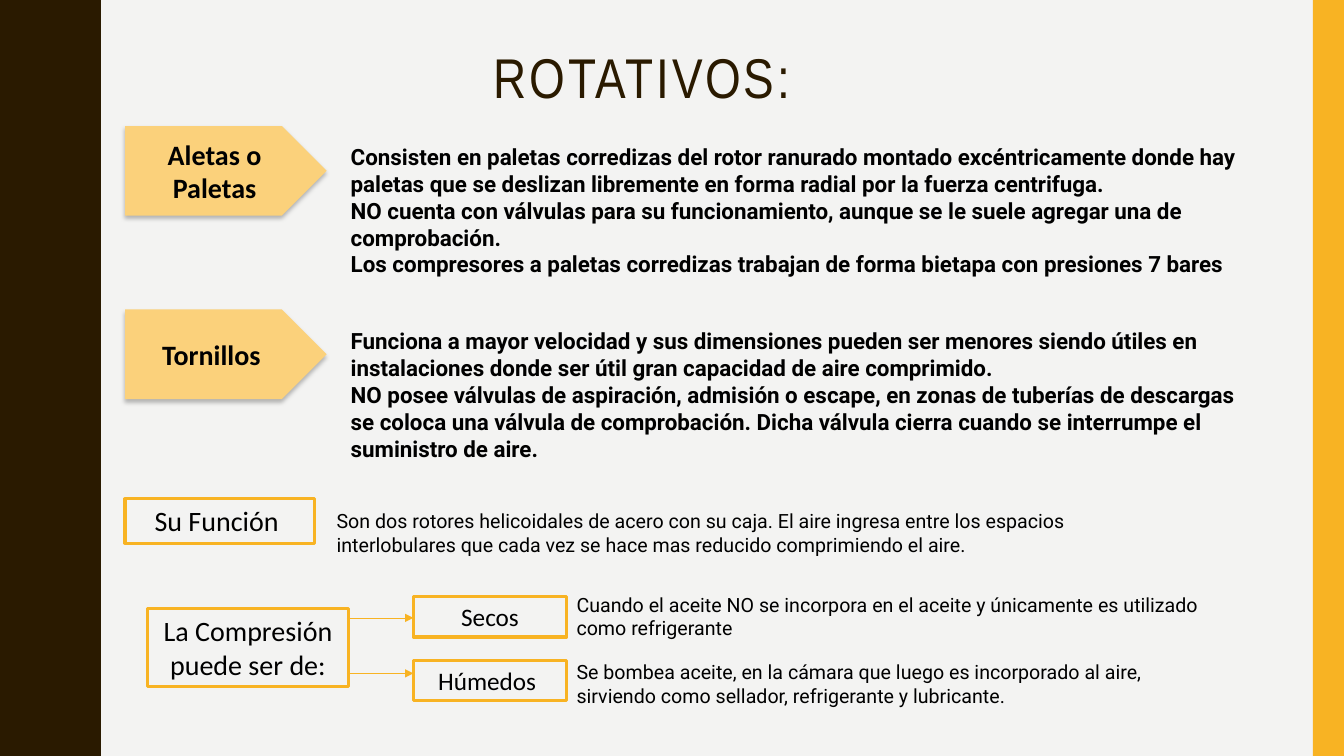
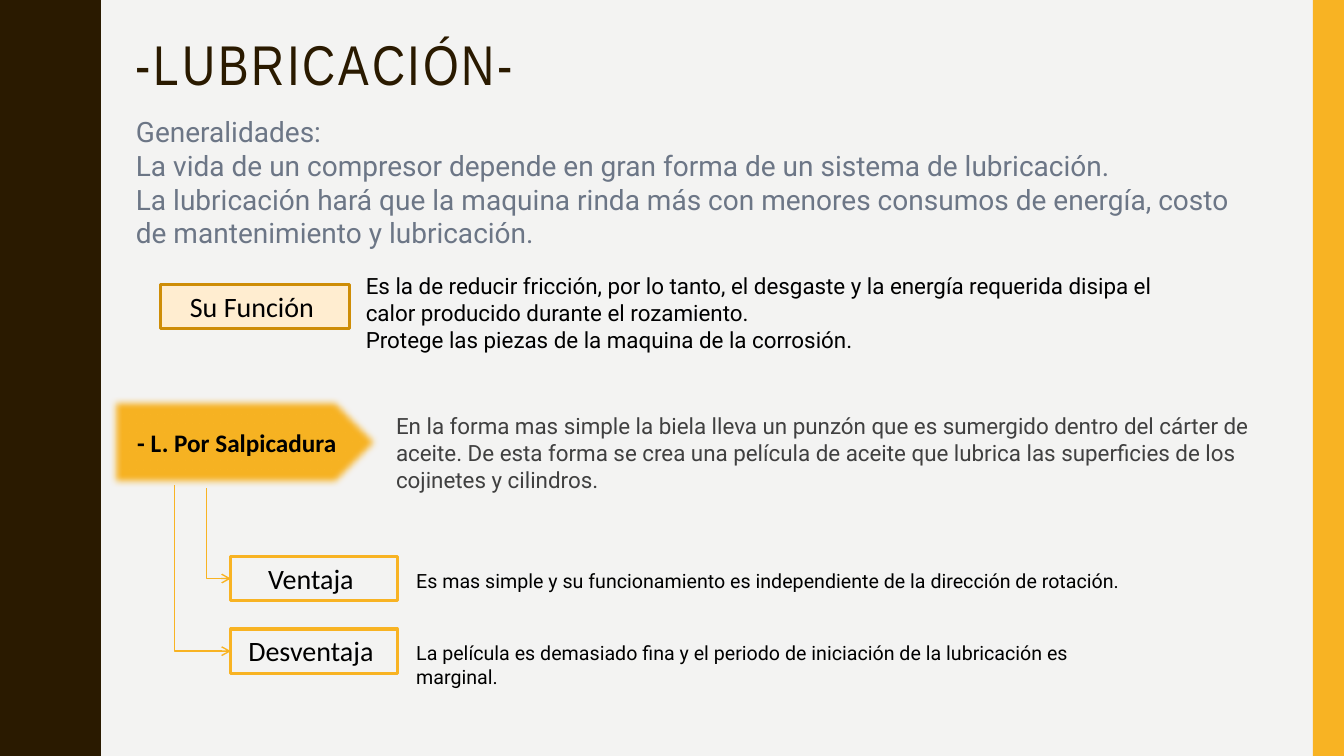
from lxml import etree
from pptx import Presentation
from pptx import util as u
from pptx.dml.color import RGBColor
from pptx.enum import shapes, text
from pptx.oxml import ns

PAPER = RGBColor(0xF3, 0xF3, 0xF2)
BROWN = RGBColor(0x2A, 0x1A, 0x00)
AMBER = RGBColor(0xF8, 0xB3, 0x23)
SAND = RGBColor(0xFB, 0xD1, 0x7B)
CREAM = RGBColor(0xFF, 0xED, 0xD0)
OCHRE = RGBColor(0xCE, 0x8D, 0x07)
BLACK = RGBColor(0x00, 0x00, 0x00)
SLATE = RGBColor(0x6C, 0x76, 0x86)
GRAY = RGBColor(0x40, 0x40, 0x40)

TITLE_FONT, LABEL_FONT, BODY_FONT = "Arial Narrow", "Calibri", "Roboto"
WIDTH, HEIGHT = 13.33, 7.5

# First quarter of one wave of the left band, as (x, y)
WAVE_QUARTER = [(0.78, 0), (0.78, 0.07), (0.79, 0.14), (0.8, 0.2),
                (0.81, 0.25), (0.83, 0.29), (0.85, 0.33), (0.87, 0.38)]
WAVE_PERIOD = 1.5


def add_xml(parent, tag, **attributes):
    values = {name: str(value) for name, value in attributes.items()}
    return etree.SubElement(parent, ns.qn(tag), values)


# Text
def write_text(frame, paragraphs, size=14, font=BODY_FONT, color=BLACK, bold=False,
               align=text.PP_ALIGN.LEFT, anchor=text.MSO_ANCHOR.TOP,
               line_spacing=None, tracking=None):
    frame.word_wrap = True
    frame.vertical_anchor = anchor
    for index, words in enumerate(paragraphs):
        para = frame.paragraphs[0] if index == 0 else frame.add_paragraph()
        para.alignment = align
        if line_spacing:
            para.line_spacing = line_spacing
        span = para.add_run()
        span.text = words
        span.font.size = u.Pt(size)
        span.font.name = font
        span.font.bold = bold
        span.font.color.rgb = color
        if tracking:
            span.font._element.set("spc", str(tracking * 100))


def add_text(page, left, top, width, height, *paragraphs, **text_format):
    box = page.shapes.add_textbox(*map(u.Inches, (left, top, width, height)))
    write_text(box.text_frame, paragraphs, **text_format)


def add_title(page, left, top, width, words):
    add_text(page, left, top, width, 0.45, words, size=40, font=TITLE_FONT,
             color=BROWN, line_spacing=0.9, tracking=2)


# Shapes
def paint(shape, fill=None, line=None, line_width=2.25):
    shape.shadow.inherit = False
    if fill is None:
        shape.fill.background()
    else:
        shape.fill.solid()
        shape.fill.fore_color.rgb = fill
    if line is None:
        shape.line.fill.background()
    else:
        shape.line.color.rgb = line
        shape.line.width = u.Pt(line_width)


def add_shape(page, kind, left, top, width, height, **look):
    shape = page.shapes.add_shape(kind, *map(u.Inches, (left, top, width, height)))
    paint(shape, **look)
    return shape


def add_label(page, left, top, width, height, words, size=20, fill=None, line=AMBER):
    box = add_shape(page, shapes.MSO_SHAPE.RECTANGLE, left, top, width, height,
                    fill=fill, line=line)
    write_text(box.text_frame, [words], size=size, font=LABEL_FONT,
               align=text.PP_ALIGN.CENTER)


def add_arrow_label(page, left, top, width, words, size=20, **look):
    arrow = add_shape(page, shapes.MSO_SHAPE.PENTAGON, left, top, width, 0.89, **look)
    write_text(arrow.text_frame, [words], size=size, font=LABEL_FONT, bold=True,
               align=text.PP_ALIGN.CENTER, anchor=text.MSO_ANCHOR.MIDDLE)
    return arrow._element.spPr.find(ns.qn("a:effectLst"))


def add_shadowed_arrow(page, top, words):
    effects = add_arrow_label(page, 1.24, top, 2, words, fill=SAND)
    shadow = add_xml(effects, "a:outerShdw", blurRad=u.Pt(3), dist=u.Pt(2),
                     dir=90 * 60000, algn="ctr", rotWithShape=0)
    color = add_xml(shadow, "a:srgbClr", val=BLACK)
    add_xml(color, "a:alpha", val=25000)


# Connectors
def add_line(page, kind, start, end, width, head):
    line = page.shapes.add_connector(kind, *map(u.Inches, (*start, *end)))
    line.line.color.rgb = AMBER
    line.line.width = u.Pt(width)
    add_xml(line.get_or_add_ln(), "a:tailEnd", type=head)
    add_xml(line._element.spPr, "a:effectLst")
    return line


def add_down_right_arrow(page, start, end):
    """One-bend arrow: the preset goes right then down, so it is turned and flipped."""
    across, down = end[0] - start[0], end[1] - start[1]
    left = (start[0] + end[0] - down) / 2
    top = (start[1] + end[1] - across) / 2
    line = add_line(page, shapes.MSO_CONNECTOR.ELBOW, (left, top),
                    (left + down, top + across), 1, "arrow")
    properties = line._element.spPr
    properties.find(ns.qn("a:prstGeom")).set("prst", "bentConnector2")
    frame = properties.find(ns.qn("a:xfrm"))
    frame.set("rot", str(270 * 60000))
    frame.set("flipH", "1")


# Shared page: background, wavy left band, right band
def wave_points():
    low, high = WAVE_QUARTER[0][0], 0.97
    half = WAVE_QUARTER + [(low + high - x, WAVE_PERIOD / 2 - y)
                           for x, y in reversed(WAVE_QUARTER[:-1])]
    wave = half + [(x, WAVE_PERIOD - y) for x, y in reversed(half[:-1])]
    count = int(HEIGHT / WAVE_PERIOD)
    return [(x, y + turn * WAVE_PERIOD) for turn in range(count) for x, y in wave]


def add_page(deck):
    page = deck.slides.add_slide(deck.slide_layouts[6])
    page.background.fill.solid()
    page.background.fill.fore_color.rgb = PAPER
    outline = page.shapes.build_freeform(0, 0, scale=u.Inches(1))
    outline.add_line_segments(wave_points() + [(0, HEIGHT)], close=True)
    paint(outline.convert_to_shape(), fill=BROWN)
    add_shape(page, shapes.MSO_SHAPE.RECTANGLE, 13.02, 0, 0.31, HEIGHT, fill=AMBER)
    return page


def build_rotary_page(deck):
    page = add_page(deck)
    add_title(page, 4.8, 0.45, 3.74, "ROTATIVOS:")

    # Vane and screw types
    add_text(page, 3.38, 1.37, 9.51, 1.45,
             "Consisten en paletas corredizas del rotor ranurado montado excéntricamente "
             "donde hay paletas que se deslizan libremente en forma radial por la fuerza "
             "centrifuga.",
             "NO cuenta con válvulas para su funcionamiento, aunque se le suele agregar "
             "una de comprobación.",
             "Los compresores a paletas corredizas trabajan de forma bietapa con "
             "presiones 7 bares", size=16, bold=True)
    add_shadowed_arrow(page, 1.25, "Aletas o Paletas")
    add_text(page, 3.38, 3.2, 9.21, 1.45,
             "Funciona a mayor velocidad y sus dimensiones pueden ser menores siendo "
             "útiles en instalaciones donde ser útil gran capacidad de aire comprimido.",
             "NO posee válvulas de aspiración, admisión o escape, en zonas de tuberías "
             "de descargas se coloca una válvula de comprobación. Dicha válvula cierra "
             "cuando se interrumpe el suministro de aire.", size=16, bold=True)
    add_shadowed_arrow(page, 3.07, "Tornillos ")

    # Function
    add_label(page, 1.24, 4.95, 1.88, 0.44, "Su Función ")
    add_text(page, 3.24, 5, 8.26, 0.57,
             "Son dos rotores helicoidales de acero con su caja. El aire ingresa entre "
             "los espacios interlobulares que cada vez se hace mas reducido comprimiendo "
             "el aire.")

    # Kinds of compression
    add_label(page, 1.46, 6.04, 2, 0.77, "La Compresión puede ser de:")
    kinds = [
        ("Secos", 5.92, 6.13, 5.83,
         "Cuando el aceite NO se incorpora en el aceite y únicamente es utilizado "
         "como refrigerante"),
        ("Húmedos ", 6.55, 6.68, 6.5,
         "Se bombea aceite, en la cámara que luego es incorporado al aire, sirviendo "
         "como sellador, refrigerante y lubricante."),
    ]
    for name, label_top, arrow_y, text_top, description in kinds:
        add_label(page, 4.1, label_top, 1.52, 0.4, name, size=18)
        add_line(page, shapes.MSO_CONNECTOR.STRAIGHT, (3.44, arrow_y), (4.1, arrow_y),
                 0.5, "triangle")
        add_text(page, 5.62, text_top, 6.57, 0.57, description)


def build_lubrication_page(deck):
    page = add_page(deck)
    add_title(page, 1.25, 0.32, 4.43, "-LUBRICACIÓN-")
    add_text(page, 1.25, 1.09, 11.24, 1.45,
             "Generalidades:",
             "La vida de un compresor depende en gran forma de un sistema de lubricación.",
             "La lubricación hará que la maquina rinda más con menores consumos de "
             "energía, costo de mantenimiento y lubricación.", size=20, color=SLATE)

    # Function
    add_label(page, 1.59, 2.82, 1.88, 0.44, "Su Función ", fill=CREAM, line=OCHRE)
    add_text(page, 3.53, 2.65, 8.26, 0.91,
             "Es la de reducir fricción, por lo tanto, el desgaste y la energía requerida "
             "disipa el calor producido durante el rozamiento.",
             "Protege las piezas de la maquina de la corrosión.", size=16)

    # Splash lubrication
    add_text(page, 3.83, 4.04, 8.93, 0.91,
             "En la forma mas simple la biela lleva un punzón que es sumergido dentro del "
             "cárter de aceite. De esta forma se crea una película de aceite que lubrica "
             "las superficies de los cojinetes y cilindros.", size=16, color=GRAY)
    effects = add_arrow_label(page, 1.09, 3.94, 2.74, "- L. Por Salpicadura", size=18,
                              fill=AMBER, line=AMBER, line_width=0.5)
    add_xml(effects, "a:softEdge", rad=u.Pt(5))

    # Advantage and drawback
    outcomes = [
        ("Ventaja ", 5.52, (2.05, 4.84), 0.34,
         "Es mas simple y su funcionamiento es independiente de la dirección de "
         "rotación."),
        ("Desventaja ", 6.24, (1.73, 4.81), 0.57,
         "La película es demasiado fina y el periodo de iniciación de la lubricación "
         "es marginal."),
    ]
    for name, top, arrow_start, text_height, description in outcomes:
        add_label(page, 2.29, top, 1.65, 0.44, name)
        add_text(page, 4.03, top + 0.07, 7.43, text_height, description)
        add_down_right_arrow(page, arrow_start, (2.29, top + 0.22))


def main():
    deck = Presentation()
    deck.slide_width, deck.slide_height = u.Inches(WIDTH), u.Inches(HEIGHT)
    build_rotary_page(deck)
    build_lubrication_page(deck)
    deck.save("out.pptx")


if __name__ == "__main__":
    main()
